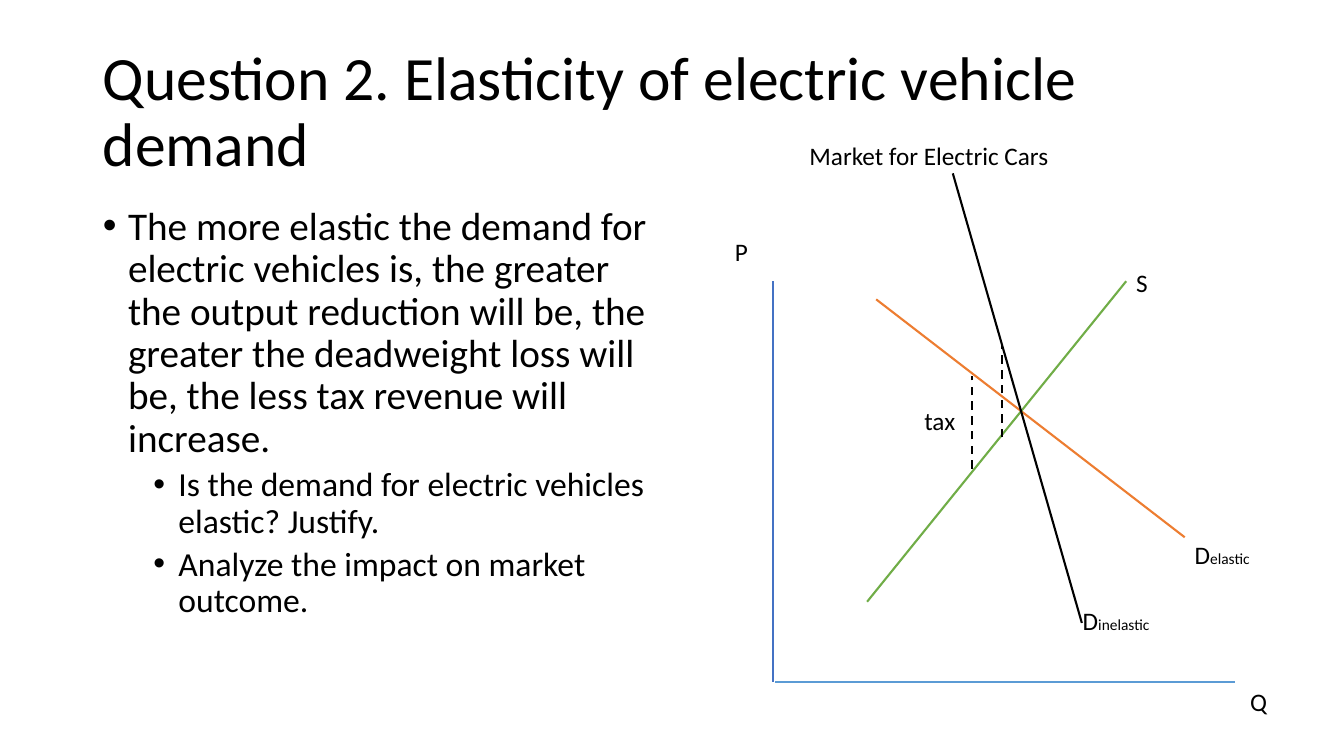
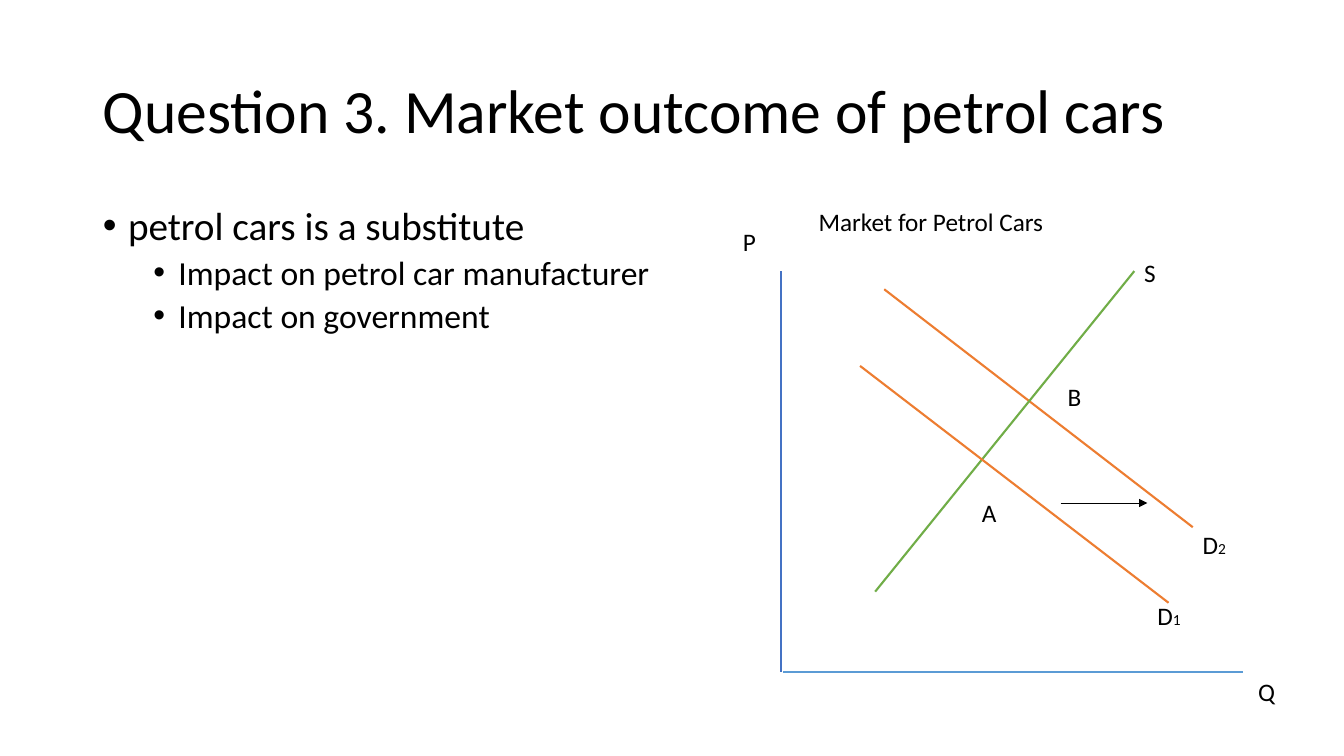
import dataclasses

import lxml.etree
import pptx
import pptx.dml.color
import pptx.enum.dml
import pptx.enum.shapes
import pptx.enum.text
import pptx.oxml.ns
import pptx.util

Inches = pptx.util.Inches
Pt = pptx.util.Pt


@dataclasses.dataclass(frozen=True)
class Theme:
    face: str = "Calibri"
    ink: str = "000000"
    price: str = "4472C4"
    amount: str = "5B9BD5"
    demand: str = "ED7D31"
    supply: str = "70AD47"
    head: float = 44
    body: tuple = (28, 24)
    label: float = 18
    sub: float = 11
    line: float = 1.5
    thin: float = 0.5


THEME = Theme()


def color(code):
    return pptx.dml.color.RGBColor.from_string(code)


def add_xml(parent, tag, **attrs):
    return lxml.etree.SubElement(parent, pptx.oxml.ns.qn(tag), **attrs)


def style(para, size):
    font = para.font
    font.name = THEME.face
    font.size = Pt(size)
    font.color.rgb = color(THEME.ink)


def place(shape, left, top, width, height):
    shape.left, shape.top = Inches(left), Inches(top)
    shape.width, shape.height = Inches(width), Inches(height)


def add_title(slide, text):
    title = slide.shapes.title
    place(title, 0.92, 0.4, 11.5, 1.45)
    frame = title.text_frame
    frame.text = text
    frame.auto_size = pptx.enum.text.MSO_AUTO_SIZE.NONE
    frame.vertical_anchor = pptx.enum.text.MSO_ANCHOR.MIDDLE
    para = frame.paragraphs[0]
    para.alignment = pptx.enum.text.PP_ALIGN.LEFT
    para.line_spacing = 0.9
    style(para, THEME.head)


def add_list(slide, items, width):
    """Fill the body with one main point, then its sub-points."""
    body = slide.placeholders[1]
    place(body, 0.92, 2, width, 4.76)
    frame = body.text_frame
    frame.text = "\n".join(items)
    frame.auto_size = pptx.enum.text.MSO_AUTO_SIZE.NONE
    for i, para in enumerate(frame.paragraphs):
        level = min(i, 1)
        para.level = level
        props = para._p.get_or_add_pPr()
        props.set("marL", str(Inches(0.25 + 0.5 * level)))
        props.set("indent", str(Inches(-0.25)))
        add_xml(props, "a:buFont", typeface="Arial")
        add_xml(props, "a:buChar", char="•")
        para.line_spacing = 0.9
        para.space_before = Pt(5 if i else 0)
        style(para, THEME.body[level])


def add_label(slide, left, top, width, text, sub=""):
    box = slide.shapes.add_textbox(
        Inches(left), Inches(top), Inches(width), Inches(0.4))
    frame = box.text_frame
    frame.word_wrap = True
    frame.auto_size = pptx.enum.text.MSO_AUTO_SIZE.SHAPE_TO_FIT_TEXT
    para = frame.paragraphs[0]
    style(para, THEME.label)
    para.add_run().text = text
    if sub:
        run = para.add_run()
        run.text = sub
        run.font.size = Pt(THEME.sub)


def add_line(slide, start, end, code, width=THEME.line, dash=False,
             arrow=False):
    line = slide.shapes.add_connector(
        pptx.enum.shapes.MSO_CONNECTOR.STRAIGHT,
        *(Inches(n) for n in (*start, *end)))
    line.line.color.rgb = color(code)
    line.line.width = Pt(width)
    if dash:
        line.line.dash_style = pptx.enum.dml.MSO_LINE.DASH
    props = line.element.spPr
    if arrow:
        add_xml(props.find(pptx.oxml.ns.qn("a:ln")), "a:tailEnd",
                type="triangle")
    add_xml(props, "a:effectLst")


def add_graph(slide, x, y, sub):
    """Draw axes, demand and supply; x, y is the top of the price axis."""
    lines = (
        (0, 0, 0, 3.98, THEME.price),
        (0.02, 3.98, 4.58, 3.98, THEME.amount),
        (1.02, 0.18, 4.08, 2.54, THEME.demand),
        (0.93, 3.18, 3.5, 0, THEME.supply),
    )
    for x1, y1, x2, y2, code in lines:
        add_line(slide, (x + x1, y + y1), (x + x2, y + y2), code)
    labels = (
        (3.5, -0.19, 0.76, "S"),
        (4.08, 2.51, 0.84, "D", sub),
        (-0.48, -0.49, 0.5, "P"),
        (4.63, 3.97, 0.5, "Q"),
    )
    for left, top, *rest in labels:
        add_label(slide, x + left, y + top, *rest)


def add_slide(deck, title, items, width):
    slide = deck.slides.add_slide(deck.slide_layouts[1])
    add_title(slide, title)
    add_list(slide, items, width)
    return slide


def add_electric(deck):
    slide = add_slide(deck, "Question 2. Elasticity of electric vehicle demand", (
        "The more elastic the demand for electric vehicles is, the greater "
        "the output reduction will be, the greater the deadweight loss will "
        "be, the less tax revenue will increase.",
        "Is the demand for electric vehicles elastic? Justify.",
        "Analyze the impact on market outcome.",
    ), 5.63)
    add_graph(slide, 7.67, 2.79, "elastic")
    add_line(slide, (9.45, 1.72), (10.73, 6.18), THEME.ink)
    for x, low in ((9.64, 4.65), (9.94, 4.34)):
        add_line(slide, (x, low), (x, low - 0.92), THEME.ink, dash=True)
    add_label(slide, 9.07, 3.97, 0.66, "tax")
    add_label(slide, 10.64, 5.96, 1.19, "D", "inelastic")
    add_label(slide, 7.93, 1.34, 4.1, "Market for Electric Cars")


def add_petrol(deck):
    slide = add_slide(deck, "Question 3. Market outcome of petrol cars", (
        "petrol cars is a substitute",
        "Impact on petrol car manufacturer",
        "Impact on government",
    ), 11.5)
    add_label(slide, 8.02, 2, 4.1, "Market for Petrol Cars")
    add_graph(slide, 7.75, 2.69, "2")
    add_line(slide, (8.53, 3.63), (11.59, 5.98), THEME.demand)
    add_line(slide, (10.52, 4.99), (11.38, 4.99), THEME.ink, THEME.thin,
             arrow=True)
    add_label(slide, 9.64, 4.88, 0.41, "A")
    add_label(slide, 10.49, 3.73, 0.41, "B")
    add_label(slide, 11.38, 5.91, 0.84, "D", "1")


def main():
    deck = pptx.Presentation()
    deck.slide_width, deck.slide_height = Inches(13.33), Inches(7.5)
    add_electric(deck)
    add_petrol(deck)
    deck.save("out.pptx")


if __name__ == "__main__":
    main()
